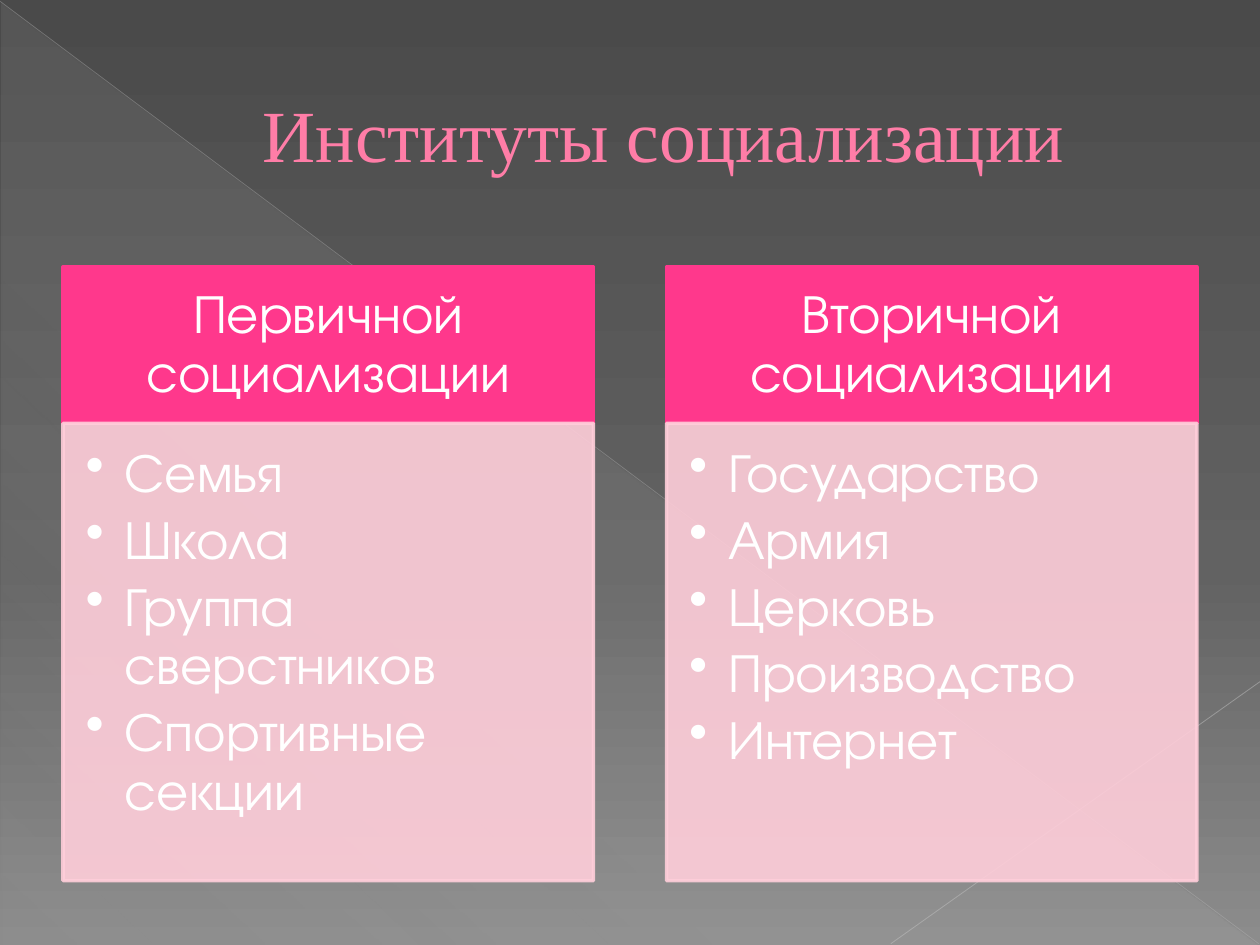
from lxml import etree
from pptx import Presentation
from pptx.dml.color import RGBColor
from pptx.enum.shapes import MSO_CONNECTOR, MSO_SHAPE
from pptx.enum.text import MSO_ANCHOR, PP_ALIGN
from pptx.oxml.ns import qn
from pptx.util import Inches, Pt

RECT, TRIANGLE = MSO_SHAPE.RECTANGLE, MSO_SHAPE.RIGHT_TRIANGLE
STRAIGHT = MSO_CONNECTOR.STRAIGHT
LEFT, CENTER = PP_ALIGN.LEFT, PP_ALIGN.CENTER
TOP, MIDDLE = MSO_ANCHOR.TOP, MSO_ANCHOR.MIDDLE
SERIF, SANS = "Times New Roman", "TeX Gyre Adventor"
COLORS = {
    "dark": "4A4A4A", "mid": "626262", "light": "8C8C8C",
    "glow": "D2D2D2", "ray": "BFBFBF", "beam": "C6C6C6",
    "title": "FF7DA7", "edge": "B12761",
    "head": "FF388C", "body": "FFCEDA", "white": "FFFFFF",
}
COLUMNS = [
    ("Первичной социализации",
     ["Семья", "Школа", "Группа сверстников", "Спортивные секции"]),
    ("Вторичной социализации",
     ["Государство", "Армия", "Церковь", "Производство", "Интернет"]),
]
COL_X, COL_W, COL_STEP = 0.5, 4.21, 4.79
HEAD_Y, HEAD_H, BODY_H = 2.12, 1.24, 3.63


def rgb(name):
    return RGBColor.from_string(COLORS[name])


def add_color(parent, name, alpha=100):
    node = etree.SubElement(parent, qn("a:srgbClr"), val=COLORS[name])
    if alpha < 100:
        etree.SubElement(node, qn("a:alpha"), val=str(alpha * 1000))


def fade(shape, alpha):
    """Make the solid fill and line of a shape partly transparent."""
    for node in shape._element.spPr.iter(qn("a:srgbClr")):
        etree.SubElement(node, qn("a:alpha"), val=str(alpha * 1000))


def set_grad(fill, owner, stops, angle):
    """Give a fill (position, color, alpha) stops at a clockwise angle."""
    fill.gradient()
    grad = next(owner.iter(qn("a:gradFill")))
    grad.find(qn("a:lin")).set("ang", str(angle * 60000))
    chain = grad.find(qn("a:gsLst"))
    for old in list(chain):
        chain.remove(old)
    for pos, name, alpha in stops:
        stop = etree.SubElement(chain, qn("a:gs"), pos=str(pos * 1000))
        add_color(stop, name, alpha)


def add_line(slide, start, end, color, width, alpha):
    line = slide.shapes.add_connector(STRAIGHT, *map(Inches, start + end))
    line.line.color.rgb = rgb(color)
    line.line.width = Pt(width)
    fade(line, alpha)
    etree.SubElement(line._element.spPr, qn("a:effectLst"))


def add_box(slide, kind, box, color=None, alpha=100):
    shape = slide.shapes.add_shape(kind, *map(Inches, box))
    shape.shadow.inherit = False
    if color:
        shape.fill.solid()
        shape.fill.fore_color.rgb = rgb(color)
        shape.line.color.rgb = rgb(color)
        shape.line.width = Pt(2)
    else:
        shape.line.fill.background()
    if alpha < 100:
        fade(shape, alpha)
    return shape


def set_text(shape, lines, *, size=31, font=SANS, color="white", align=CENTER,
             anchor=MIDDLE, insets=(0.1, 0.05, 0.1, 0.05), spacing=1.0,
             after=0, left=0, bullet=False, edge=None):
    frame = shape.text_frame
    frame.word_wrap = True
    frame.vertical_anchor = anchor
    (frame.margin_left, frame.margin_top,
     frame.margin_right, frame.margin_bottom) = map(Inches, insets)
    for i, line in enumerate(lines):
        para = frame.add_paragraph() if i else frame.paragraphs[0]
        para.alignment = align
        para.line_spacing = spacing
        para.space_after = Pt(after)
        props = para._p.get_or_add_pPr()
        props.set("marL", str(Inches(left)))
        if bullet:
            props.set("indent", str(-Inches(left)))
            etree.SubElement(props, qn("a:buChar"), char="•")
        run = para.add_run()
        run.text = line
        run.font.size = Pt(size)
        run.font.name = font
        run.font.color.rgb = rgb(color)
        if edge:
            outline = etree.Element(qn("a:ln"), w=str(Pt(0.5)))
            add_color(etree.SubElement(outline, qn("a:solidFill")), edge)
            run._r.get_or_add_rPr().insert(0, outline)


def add_backdrop(slide):
    set_grad(slide.background.fill, slide._element,
             [(0, "dark", 100), (60, "mid", 100), (100, "light", 100)], 90)
    glow = add_box(slide, TRIANGLE, (0.01, 0.02, 9.98, 7.48))
    set_grad(glow.fill, glow._element,
             [(0, "glow", 10), (70, "glow", 8), (100, "glow", 1)], 133)
    add_line(slide, (0, 0.01), (9.99, 7.49), "ray", 0.39, 35)
    add_line(slide, (10, 5.41), (7.07, 7.49), "beam", 0.47, 45)


def add_column(slide, x, head, items):
    top = add_box(slide, RECT, (x, HEAD_Y, COL_W, HEAD_H), "head")
    set_text(top, [head], insets=(0.24, 0.14, 0.24, 0.14), spacing=0.9)
    body = add_box(slide, RECT, (x, HEAD_Y + HEAD_H, COL_W, BODY_H), "body", 90)
    set_text(body, items, align=LEFT, anchor=TOP, spacing=0.9, after=4.6,
             insets=(0.18, 0.18, 0.24, 0.27), left=0.31, bullet=True)


def main():
    deck = Presentation()
    deck.slide_width, deck.slide_height = Inches(10), Inches(7.5)
    slide = deck.slides.add_slide(deck.slide_layouts[6])
    add_backdrop(slide)
    title = slide.shapes.add_textbox(*map(Inches, (0.5, 0.29, 9, 1.53)))
    set_text(title, ["Институты социализации"], size=42, font=SERIF,
             color="title", left=0.53, edge="edge")
    for i, (head, items) in enumerate(COLUMNS):
        add_column(slide, COL_X + i * COL_STEP, head, items)
    deck.save("out.pptx")


if __name__ == "__main__":
    main()
